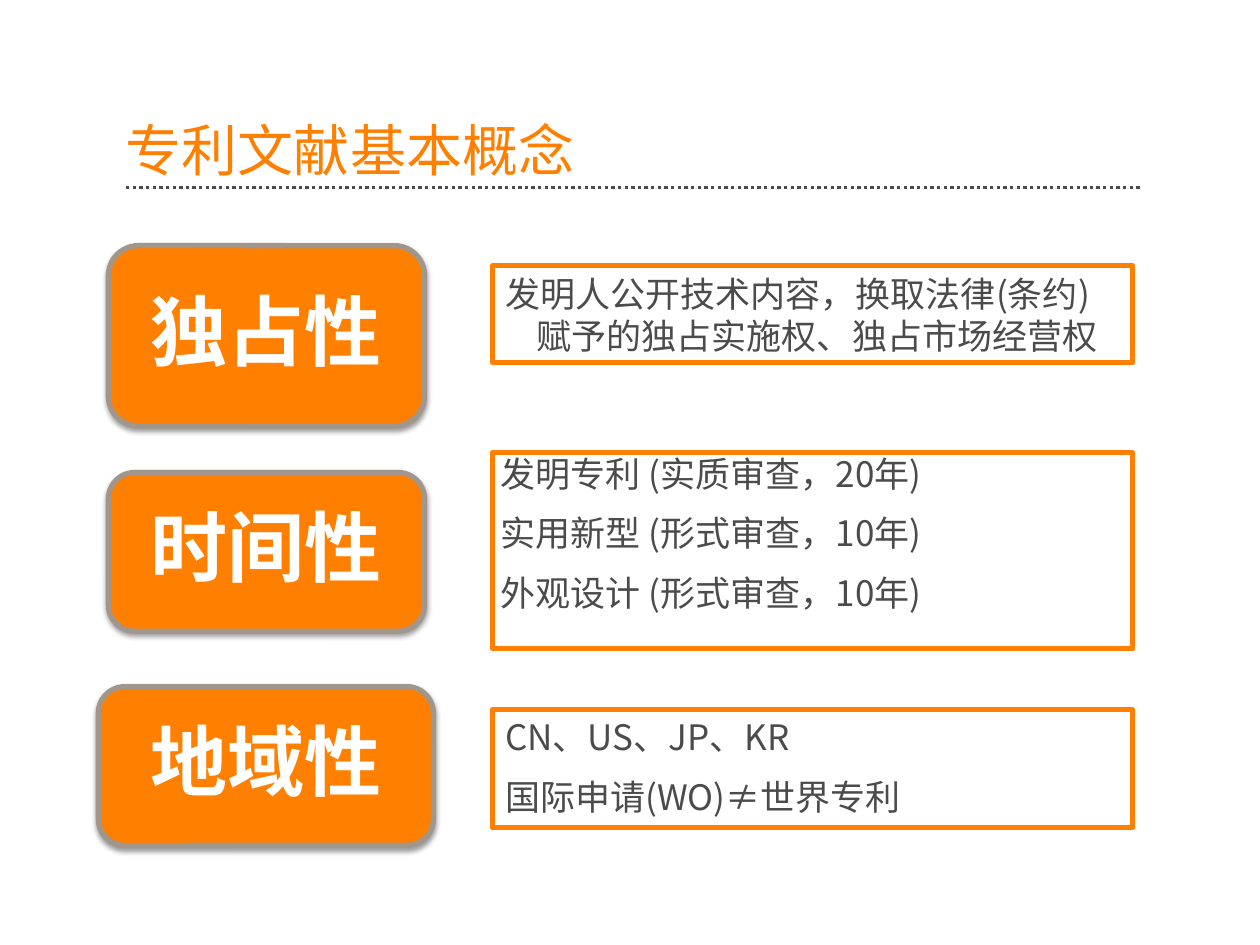
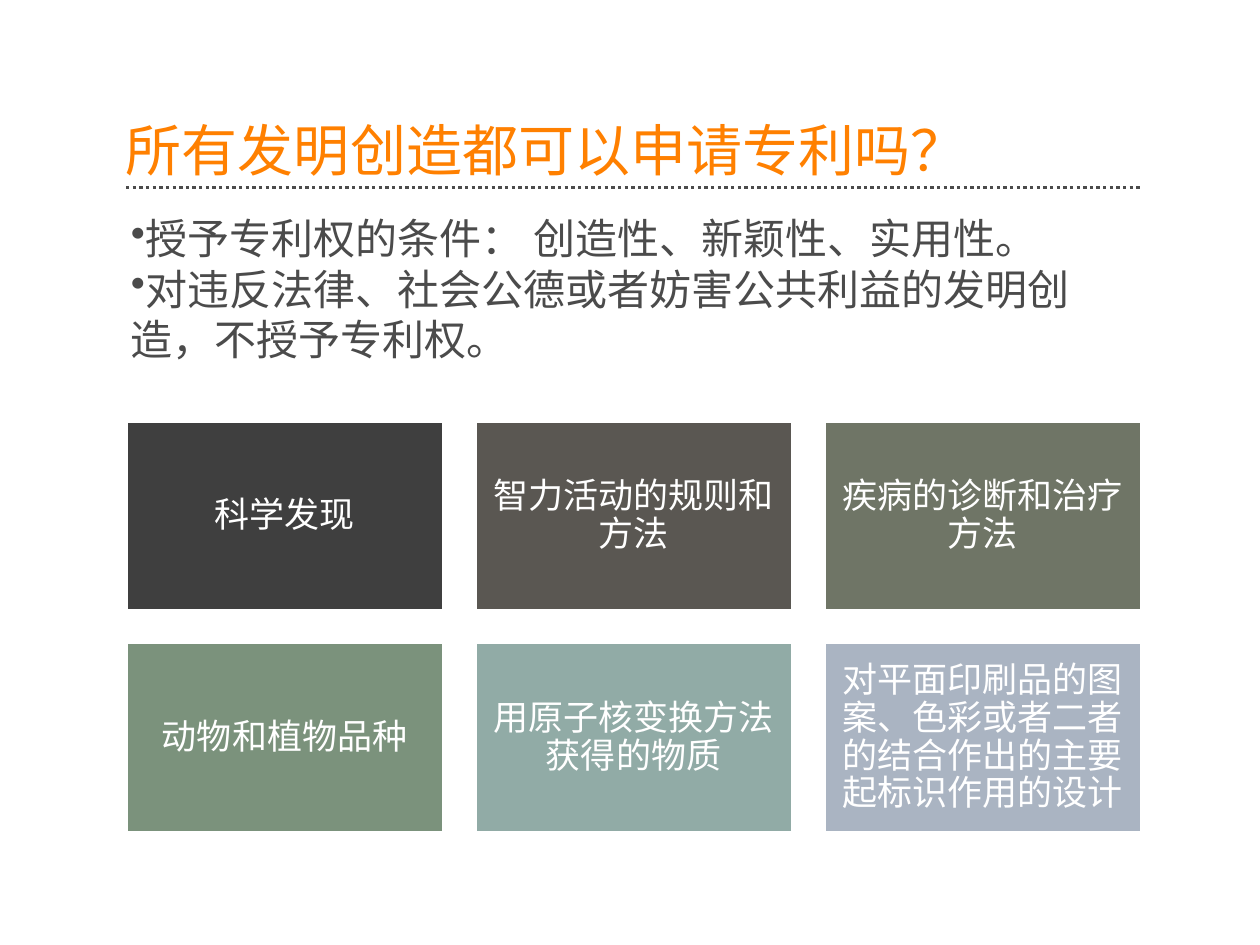
import pptx
import pptx.util
from lxml import etree
from pptx.dml.color import RGBColor
from pptx.enum.dml import MSO_LINE
from pptx.enum.shapes import MSO_CONNECTOR, MSO_SHAPE
from pptx.enum.text import MSO_ANCHOR, PP_ALIGN
from pptx.oxml.ns import qn
from pptx.util import Pt

ORANGE = RGBColor(0xFF, 0x80, 0x00)
TAUPE = RGBColor(0xA0, 0x96, 0x8C)
GREY = RGBColor(0x4B, 0x4B, 0x4B)
WHITE = RGBColor(0xFF, 0xFF, 0xFF)
TILE_COLORS = [
    RGBColor(0x3F, 0x3F, 0x3F), RGBColor(0x5A, 0x57, 0x52),
    RGBColor(0x6F, 0x75, 0x66), RGBColor(0x7B, 0x92, 0x7C),
    RGBColor(0x91, 0xAB, 0xA6), RGBColor(0xAA, 0xB4, 0xC2),
]
FONT = "Noto Sans CJK SC"
LEFT, WIDTH = 72, 580.3
RULE_Y = 107.3
BOX_LEFT, BOX_WIDTH = 281.5, 365.8
TILE_WIDTH, TILE_HEIGHT, TILE_GAP = 181.4, 108.7, 18
TILE_TOP, TILE_COLUMNS = 240.5, 3

RIGHTS = [  # label, label (left, top, width, height)
    ("独占性", (61.9, 140.4, 180.7, 103)),
    ("时间性", (61.9, 270, 180.7, 90.7)),
    ("地域性", (56.2, 392.4, 191.5, 90.7)),
]
EXCLUSIONS = [
    "科学发现", "智力活动的规则和方法", "疾病的诊断和治疗方法",
    "动物和植物品种", "用原子核变换方法获得的物质",
    "对平面印刷品的图案、色彩或者二者的结合作出的主要起标识作用的设计",
]


def write(shape, paragraphs, size, color=GREY, font=FONT, bold=False,
          align=PP_ALIGN.LEFT, anchor=MSO_ANCHOR.TOP, insets=(7.2, 3.6, 7.2, 3.6),
          spacing=None, gap=0, hanging=0, bullet=None):
    """Fill a shape with paragraphs; insets run left, top, right, bottom."""
    tf = shape.text_frame
    tf.word_wrap = True
    tf.vertical_anchor = anchor
    tf.margin_left, tf.margin_top, tf.margin_right, tf.margin_bottom = map(Pt, insets)
    for i, text in enumerate(paragraphs):
        p = tf.add_paragraph() if i else tf.paragraphs[0]
        p.alignment = align
        if spacing:
            p.line_spacing = spacing
        if i and gap:
            p.space_before = Pt(gap)
        pPr = p._p.get_or_add_pPr()
        if hanging:
            pPr.set("marL", str(Pt(hanging)))
            pPr.set("indent", str(-Pt(hanging)))
        if bullet:
            etree.SubElement(pPr, qn("a:buChar"), char=bullet)
        r = p.add_run()
        r.text = text
        r.font.name = font
        r.font.size = Pt(size)
        r.font.bold = bold
        r.font.color.rgb = color
        r.font._element.find(qn("a:latin")).addnext(
            etree.Element(qn("a:ea"), typeface=FONT))


def add_textbox(s, box, paragraphs, **style):
    write(s.shapes.add_textbox(*map(Pt, box)), paragraphs, **style)


def add_panel(s, kind, box, fill, line, line_width):
    sp = s.shapes.add_shape(kind, *map(Pt, box))
    sp.shadow.inherit = False
    if fill is None:
        sp.fill.background()
    else:
        sp.fill.solid()
        sp.fill.fore_color.rgb = fill
    sp.line.color.rgb = line
    sp.line.width = Pt(line_width)
    return sp


def add_drop_shadow(sp):
    effects = sp._element.spPr.find(qn("a:effectLst"))
    shadow = etree.SubElement(effects, qn("a:outerShdw"), blurRad=str(Pt(3.1)),
                              dist=str(Pt(1.6)), dir="5400000", rotWithShape="0")
    color = etree.SubElement(shadow, qn("a:srgbClr"), val="000000")
    etree.SubElement(color, qn("a:alpha"), val="38000")


def add_titled_slide(prs, title):
    s = prs.slides.add_slide(prs.slide_layouts[6])
    rule = s.shapes.add_connector(MSO_CONNECTOR.STRAIGHT, Pt(LEFT), Pt(RULE_Y),
                                  Pt(LEFT + WIDTH), Pt(RULE_Y))
    rule.line.color.rgb = GREY
    rule.line.width = Pt(1.9)
    rule.line.dash_style = MSO_LINE.ROUND_DOT
    etree.SubElement(rule._element.spPr, qn("a:effectLst"))
    add_textbox(s, (LEFT, 39.6, WIDTH, 65.5), [title], size=32, color=ORANGE,
                anchor=MSO_ANCHOR.BOTTOM, insets=(0, 0, 0, 0), spacing=0.9)
    return s


def add_label(s, text, box):
    sp = add_panel(s, MSO_SHAPE.ROUNDED_RECTANGLE, box, ORANGE, TAUPE, 3)
    add_drop_shadow(sp)
    write(sp, [text], size=44, color=WHITE, bold=True, align=PP_ALIGN.CENTER,
          anchor=MSO_ANCHOR.MIDDLE, spacing=0.9)


def add_explanation(s, top, height, paragraphs, **style):
    sp = add_panel(s, MSO_SHAPE.RECTANGLE, (BOX_LEFT, top, BOX_WIDTH, height),
                   None, ORANGE, 3)
    write(sp, paragraphs, size=20, gap=10, hanging=18, **style)


def add_tile(s, index, text):
    row, column = divmod(index, TILE_COLUMNS)
    box = (LEFT + column * (TILE_WIDTH + TILE_GAP),
           TILE_TOP + row * (TILE_HEIGHT + TILE_GAP), TILE_WIDTH, TILE_HEIGHT)
    sp = add_panel(s, MSO_SHAPE.RECTANGLE, box, TILE_COLORS[index], WHITE, 2)
    write(sp, [text], size=20, color=WHITE, font="Arial", align=PP_ALIGN.CENTER,
          anchor=MSO_ANCHOR.MIDDLE, insets=(6, 6, 6, 6), spacing=0.9)


def build_concepts(prs):
    s = add_titled_slide(prs, "专利文献基本概念")
    for text, box in RIGHTS:
        add_label(s, text, box)
    add_explanation(s, 151.9, 55.4, [
        "发明人公开技术内容，换取法律(条约)赋予的独占实施权、独占市场经营权"])
    add_explanation(s, 258.5, 112.3, [
        " 发明专利 (实质审查，20年)",
        " 实用新型 (形式审查，10年)",
        " 外观设计 (形式审查，10年)"], insets=(0, 0, 14.4, 0))
    add_explanation(s, 405.4, 67.7, ["CN、US、JP、KR", "国际申请(WO)≠世界专利"])


def build_exclusions(prs):
    s = add_titled_slide(prs, "所有发明创造都可以申请专利吗？")
    for index, text in enumerate(EXCLUSIONS):
        add_tile(s, index, text)
    add_textbox(s, (67.7, 118.1, 562.3, 94.3), [
        "授予专利权的条件： 创造性、新颖性、实用性。",
        "对违反法律、社会公德或者妨害公共利益的发明创造，不授予专利权。"],
        size=24, bullet="•")


def main():
    prs = pptx.Presentation()
    prs.slide_width, prs.slide_height = Pt(720), Pt(540)
    build_concepts(prs)
    build_exclusions(prs)
    prs.save("out.pptx")


if __name__ == "__main__":
    main()
